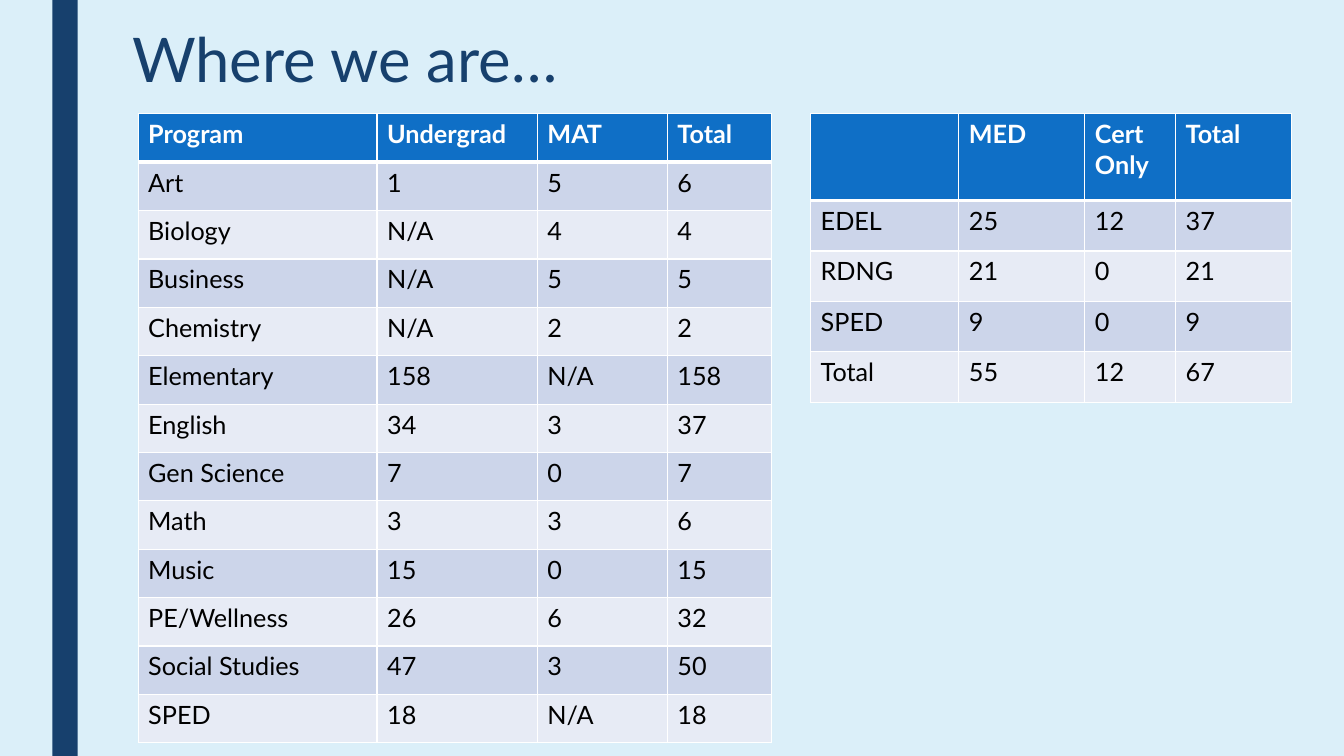
"""Build the enrolment overview slide with its two program tables."""
from dataclasses import dataclass

from lxml import etree
from pptx import Presentation
from pptx import util as u
from pptx.dml.color import RGBColor
from pptx.enum import shapes, text
from pptx.oxml import ns


@dataclass(frozen=True)
class Theme:
    font: str = "Lato"
    background: str = "DBEFF9"
    navy: str = "17406D"
    header: str = "0F6FC6"
    bands: tuple = ("CCD5EA", "E7EBF5")
    light: str = "FFFFFF"
    dark: str = "000000"
    title_size: int = 44
    table_size: int = 18
    rule: int = 1
    header_rule: int = 3


class SlideBuilder:
    def __init__(self, deck, theme):
        self.theme = theme
        self.page = deck.slides.add_slide(deck.slide_layouts[5])
        self.paint(self.page.background.fill, theme.background)

    def paint(self, fill, color):
        fill.solid()
        fill.fore_color.rgb = RGBColor.from_string(color)

    def style(self, frame, size, color, bold=False):
        for para in frame.paragraphs:
            para.font.name = self.theme.font
            para.font.size = u.Pt(size)
            para.font.bold = bold
            para.font.color.rgb = RGBColor.from_string(color)

    def bar(self, left, top, width, height):
        box = self.page.shapes.add_shape(
            shapes.MSO_SHAPE.RECTANGLE, *map(u.Inches, (left, top, width, height)))
        box.shadow.inherit = False
        self.paint(box.fill, self.theme.navy)
        box.line.fill.background()

    def title(self, wording, left, top, width, height):
        box = self.page.shapes.title
        box.left, box.top, box.width, box.height = map(
            u.Inches, (left, top, width, height))
        frame = box.text_frame
        frame.text = wording
        frame.word_wrap = True
        frame.auto_size = text.MSO_AUTO_SIZE.NONE
        frame.vertical_anchor = text.MSO_ANCHOR.TOP
        para = frame.paragraphs[0]
        para.alignment = text.PP_ALIGN.LEFT
        para.line_spacing = 0.89
        self.style(frame, self.theme.title_size, self.theme.navy)

    def border(self, cell, side, points):
        properties = cell._tc.get_or_add_tcPr()
        line = etree.SubElement(properties, ns.qn(f"a:ln{side}"), w=str(u.Pt(points)))
        fill = etree.SubElement(line, ns.qn("a:solidFill"))
        etree.SubElement(fill, ns.qn("a:srgbClr"), val=self.theme.light)

    def cell(self, cell, wording, row):
        theme = self.theme
        is_header = row == 0
        cell.text = wording
        self.style(cell.text_frame, theme.table_size,
                   theme.light if is_header else theme.dark, is_header)
        top = theme.header_rule if row == 1 else theme.rule
        bottom = theme.header_rule if is_header else theme.rule
        for side, points in zip("LRTB", (theme.rule, theme.rule, top, bottom)):
            self.border(cell, side, points)
        self.paint(cell.fill, theme.header if is_header else theme.bands[(row - 1) % 2])

    def table(self, rows, left, top, widths, header_height, row_height):
        heights = [header_height] + [row_height] * (len(rows) - 1)
        frame = self.page.shapes.add_table(
            len(rows), len(widths),
            *map(u.Inches, (left, top, sum(widths), sum(heights))))
        table = frame.table
        for column, width in zip(table.columns, widths):
            column.width = u.Inches(width)
        for line, height in zip(table.rows, heights):
            line.height = u.Inches(height)
        for row, values in enumerate(rows):
            for column, wording in enumerate(values):
                self.cell(table.cell(row, column), wording, row)


PROGRAMS = [
    ("Program", "Undergrad", "MAT", "Total"),
    ("Art", "1", "5", "6"),
    ("Biology", "N/A", "4", "4"),
    ("Business", "N/A", "5", "5"),
    ("Chemistry", "N/A", "2", "2"),
    ("Elementary", "158", "N/A", "158"),
    ("English", "34", "3", "37"),
    ("Gen Science", "7", "0", "7"),
    ("Math", "3", "3", "6"),
    ("Music", "15", "0", "15"),
    ("PE/Wellness", "26", "6", "32"),
    ("Social Studies", "47", "3", "50"),
    ("SPED", "18", "N/A", "18"),
]
GRADUATE = [
    ("", "MED", "Cert\nOnly", "Total"),
    ("EDEL", "25", "12", "37"),
    ("RDNG", "21", "0", "21"),
    ("SPED", "9", "0", "9"),
    ("Total", "55", "12", "67"),
]


def main():
    deck = Presentation()
    deck.slide_width, deck.slide_height = u.Inches(13.33), u.Inches(7.5)
    builder = SlideBuilder(deck, Theme())
    builder.bar(0.52, 0, 0.25, 7.5)
    builder.title("Where we are…", 1.21, 0.25, 10.5, 1.05)
    builder.table(PROGRAMS, 1.37, 1.13, (2.37, 1.59, 1.29, 1.03), 0.48, 0.48)
    builder.table(GRADUATE, 8.04, 1.13, (1.47, 1.25, 0.9, 1.15), 0.86, 0.5)
    deck.save("out.pptx")


if __name__ == "__main__":
    main()
